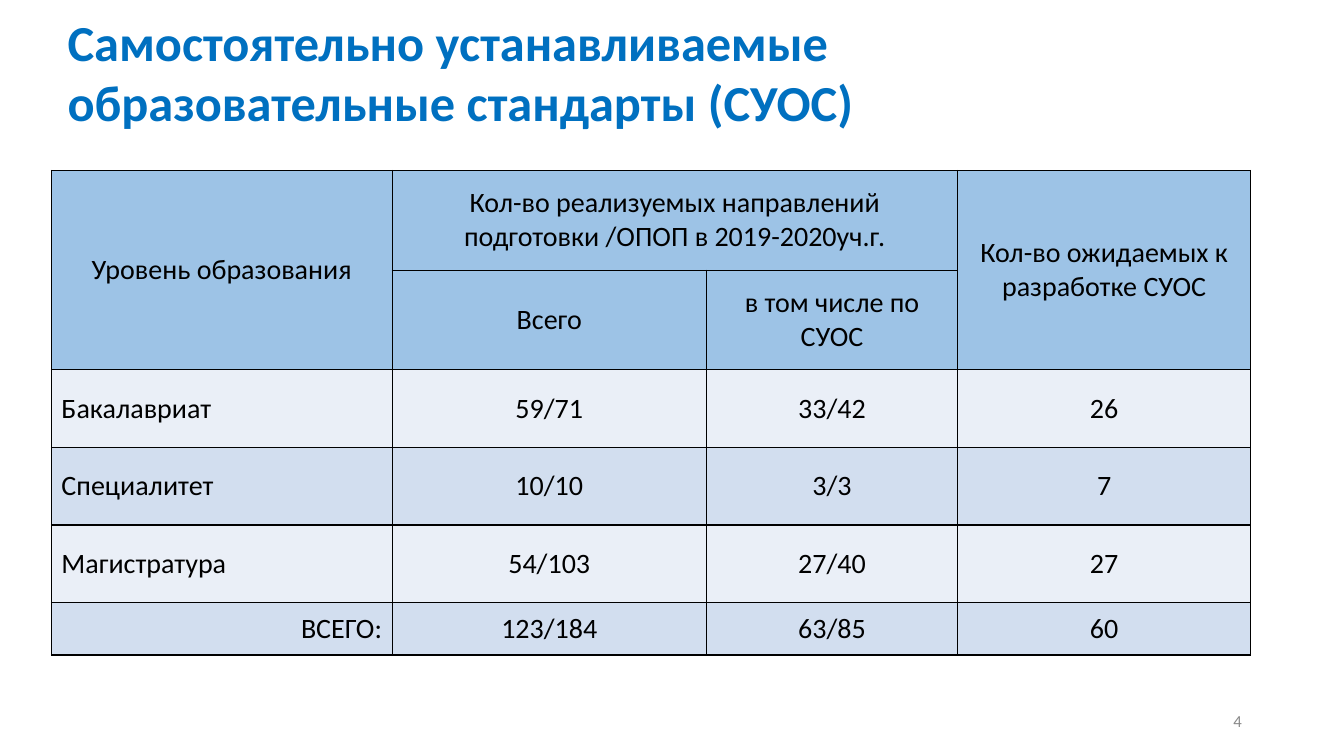
from dataclasses import dataclass

from lxml.etree import SubElement
from pptx import Presentation
from pptx.dml.color import RGBColor
from pptx.enum.text import MSO_ANCHOR, MSO_AUTO_SIZE, PP_ALIGN
from pptx.oxml.ns import qn
from pptx.util import Inches, Pt


@dataclass(frozen=True)
class Theme:
    font: str = "Calibri"
    title_color: str = "0070C0"
    text_color: str = "000000"
    number_color: str = "898989"
    header_fill: str = "9DC3E6"
    band_fills: tuple = ("EAEFF7", "D2DEEF")
    border_color: str = "000000"
    border_width: float = 1
    title_size: int = 36
    table_size: int = 20
    number_size: int = 12


def write(frame, text, *, font, size, color, bold=False, align=PP_ALIGN.LEFT):
    frame.text = text
    frame.word_wrap = True
    frame.vertical_anchor = MSO_ANCHOR.MIDDLE
    for paragraph in frame.paragraphs:
        paragraph.alignment = align
        for run in paragraph.runs:
            run.font.name = font
            run.font.size = Pt(size)
            run.font.bold = bold
            run.font.color.rgb = RGBColor.from_string(color)


class SlideBuilder:
    """Draws styled elements on one slide with a grid of 160 columns by 90 rows."""

    def __init__(self, deck, theme):
        self.theme = theme
        self.column = deck.slide_width / 160
        self.row = deck.slide_height / 90
        self.slide = deck.slides.add_slide(deck.slide_layouts[5])

    def across(self, columns):
        return round(columns * self.column)

    def down(self, rows):
        return round(rows * self.row)

    def box(self, left, top, width, height):
        return self.across(left), self.down(top), self.across(width), self.down(height)

    def title(self, text, *place):
        heading = self.slide.shapes.title
        heading.left, heading.top, heading.width, heading.height = self.box(*place)
        write(heading.text_frame, text, font=self.theme.font, bold=True,
              size=self.theme.title_size, color=self.theme.title_color)
        heading.text_frame.auto_size = MSO_AUTO_SIZE.NONE

    def page_number(self, text, *place):
        number = self.slide.shapes.add_textbox(*self.box(*place))
        write(number.text_frame, text, font=self.theme.font, align=PP_ALIGN.RIGHT,
              size=self.theme.number_size, color=self.theme.number_color)

    def border(self, cell):
        properties = cell._tc.get_or_add_tcPr()
        for side in ("lnL", "lnR", "lnT", "lnB"):
            line = SubElement(properties, qn(f"a:{side}"), w=str(Pt(self.theme.border_width)))
            fill = SubElement(line, qn("a:solidFill"))
            SubElement(fill, qn("a:srgbClr"), val=self.theme.border_color)

    def cell(self, cell, text, fill, align):
        self.border(cell)
        cell.fill.solid()
        cell.fill.fore_color.rgb = RGBColor.from_string(fill)
        write(cell.text_frame, text, font=self.theme.font, align=align,
              size=self.theme.table_size, color=self.theme.text_color)
        cell.vertical_anchor = MSO_ANCHOR.MIDDLE

    def table(self, header, levels, left, top, widths, heights, merges):
        records = header + levels
        place = self.box(left, top, sum(widths), sum(heights))
        grid = self.slide.shapes.add_table(len(records), len(widths), *place).table
        for column, width in zip(grid.columns, widths):
            column.width = self.across(width)
        for row, height in zip(grid.rows, heights):
            row.height = self.down(height)
        for r, record in enumerate(records):
            level = r - len(header)
            fill = self.theme.header_fill if level < 0 else self.theme.band_fills[level % 2]
            for c, text in enumerate(record):
                align = PP_ALIGN.CENTER
                if level >= 0 and c == 0:
                    align = PP_ALIGN.RIGHT if r == len(records) - 1 else PP_ALIGN.LEFT
                self.cell(grid.cell(r, c), text, fill, align)
        for first, last in merges:
            grid.cell(*first).merge(grid.cell(*last))


def main():
    deck = Presentation()
    deck.slide_width, deck.slide_height = Inches(13.33), Inches(7.5)
    standards = SlideBuilder(deck, Theme())
    standards.title("Самостоятельно устанавливаемые\vобразовательные стандарты (СУОС)",
                    6.84, 3.6, 147.72, 9.84)
    standards.table(
        header=[
            ("Уровень образования",
             "Кол-во реализуемых направлений подготовки /ОПОП в 2019-2020уч.г.",
             "", "Кол-во ожидаемых к разработке СУОС"),
            ("", "Всего", "в том числе по СУОС", ""),
        ],
        levels=[
            ("Бакалавриат", "59/71", "33/42", "26"),
            ("Специалитет", "10/10", "3/3", "7"),
            ("Магистратура", "54/103", "27/40", "27"),
            ("ВСЕГО:", "123/184", "63/85", "60"),
        ],
        left=6.12, top=20.28,
        widths=(40.56, 37.44, 29.88, 34.92),
        heights=(11.88,) * 2 + (9.24,) * 3 + (6.24,),
        merges=[((0, 0), (1, 0)), ((0, 1), (0, 2)), ((0, 3), (1, 3))],
    )
    standards.page_number("4", 113.04, 83.4, 36, 4.8)
    deck.save("out.pptx")


if __name__ == "__main__":
    main()
